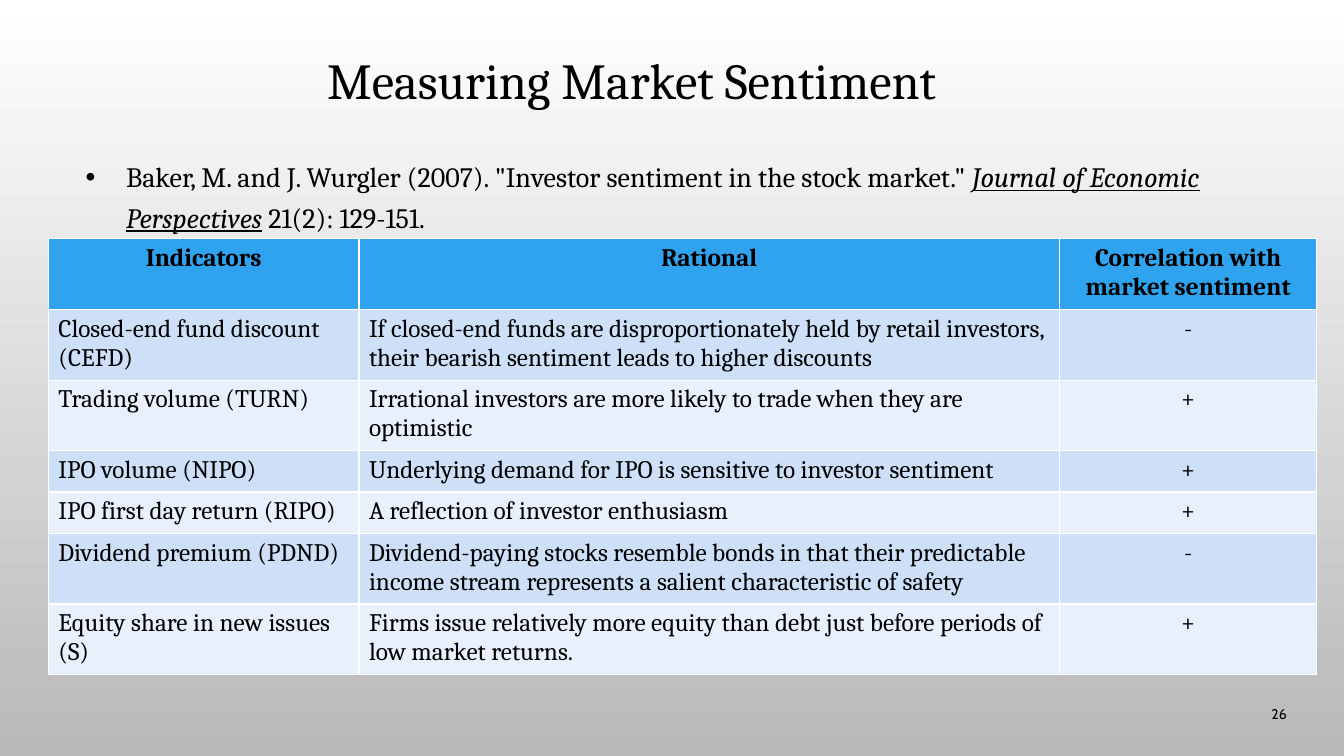
from lxml import etree
from pptx import Presentation
from pptx.dml.color import RGBColor
from pptx.enum.text import MSO_ANCHOR, MSO_AUTO_SIZE, PP_ALIGN
from pptx.oxml.ns import qn
from pptx.util import Inches, Pt

CENTER, LEFT, RIGHT = PP_ALIGN.CENTER, PP_ALIGN.LEFT, PP_ALIGN.RIGHT
MIDDLE = MSO_ANCHOR.MIDDLE

# Content
TITLE = "Measuring Market Sentiment"
CITATION = [
    ("Baker, M. and J. Wurgler (2007). \"Investor sentiment in the stock market.\" ", False),
    ("Journal of Economic Perspectives", True),
    (" 21(2): 129-151.", False),
]
PAGE_NUMBER = "26"
INDICATORS = [
    ("Indicators", "Rational", "Correlation with market sentiment"),
    ("Closed-end fund discount (CEFD)",
     "If closed-end funds are disproportionately held by retail investors, "
     "their bearish sentiment leads to higher discounts", "-"),
    ("Trading volume (TURN)",
     "Irrational investors are more likely to trade when they are optimistic", "+"),
    ("IPO volume (NIPO)",
     "Underlying demand for IPO is sensitive to investor sentiment", "+"),
    ("IPO first day return (RIPO)", "A reflection of investor enthusiasm", "+"),
    ("Dividend premium (PDND)",
     "Dividend-paying stocks resemble bonds in that their predictable "
     "income stream represents a salient characteristic of safety", "-"),
    ("Equity share in new issues (S)",
     "Firms issue relatively more equity than debt just before periods of "
     "low market returns.", "+"),
]
COLUMN_WIDTHS = (3.08, 6.95, 2.55)
ROW_HEIGHT = 0.41
HEADER_FILL = "2FA3EE"
BAND_FILLS = ("CDE0F8", "E8F0FC")
BLACK = "000000"


def color(value):
    return RGBColor.from_string(value)


def style(font, size, name="Cambria", bold=False):
    font.size, font.name, font.bold = Pt(size), name, bold
    font.color.rgb = color(BLACK)


def place(shape, left, top, width, height):
    shape.left, shape.top = Inches(left), Inches(top)
    shape.width, shape.height = Inches(width), Inches(height)


presentation = Presentation()
presentation.slide_width = Inches(13.33)
presentation.slide_height = Inches(7.5)
slide = presentation.slides.add_slide(presentation.slide_layouts[1])

# Background gradient, white at the top
background = slide.background.fill
background.gradient()
background.gradient_angle = 270
for stop, value in zip(background.gradient_stops, ("FFFFFF", "B9B9B9")):
    stop.color.rgb = color(value)

# Title
title = slide.shapes.title
place(title, 2.38, 0.36, 7.77, 0.94)
title.text_frame.text = TITLE
title.text_frame.auto_size = MSO_AUTO_SIZE.NONE
title.text_frame.vertical_anchor = MIDDLE
paragraph = title.text_frame.paragraphs[0]
paragraph.alignment, paragraph.line_spacing = CENTER, 0.9
style(paragraph.runs[0].font, 36)

# Citation bullet
body = slide.placeholders[1]
place(body, 0.75, 1.47, 12.1, 1.05)
body.text_frame.auto_size = MSO_AUTO_SIZE.NONE
paragraph = body.text_frame.paragraphs[0]
paragraph.line_spacing = 1.2
paragraph.space_before, paragraph.space_after = Pt(0), Pt(9.6)
properties = paragraph._p.get_or_add_pPr()
properties.set("marL", str(Inches(0.4)))
properties.set("indent", str(-Inches(0.4)))
bullet_color = etree.SubElement(properties, qn("a:buClr"))
etree.SubElement(bullet_color, qn("a:srgbClr"), val=BLACK)
etree.SubElement(properties, qn("a:buFont"), typeface="Arial")
etree.SubElement(properties, qn("a:buChar"), char="•")
for text, is_journal in CITATION:
    run = paragraph.add_run()
    run.text = text
    style(run.font, 20)
    run.font.italic = run.font.underline = is_journal

# Page number
number = slide.shapes.add_textbox(Inches(12.02), Inches(6.88), Inches(0.84), Inches(0.4))
number.text_frame.word_wrap = True
number.text_frame.vertical_anchor = MIDDLE
number.text_frame.text = PAGE_NUMBER
paragraph = number.text_frame.paragraphs[0]
paragraph.alignment = RIGHT
style(paragraph.runs[0].font, 10, "Cabin")

# Indicator table; the default table style supplies the white borders
table = slide.shapes.add_table(
    len(INDICATORS), len(COLUMN_WIDTHS), Inches(0.48), Inches(2.37),
    Inches(sum(COLUMN_WIDTHS)), Inches(ROW_HEIGHT * len(INDICATORS))).table
for column, width in zip(table.columns, COLUMN_WIDTHS):
    column.width = Inches(width)
for row_index, values in enumerate(INDICATORS):
    is_header = row_index == 0
    fill = HEADER_FILL if is_header else BAND_FILLS[(row_index - 1) % 2]
    for column_index, text in enumerate(values):
        cell = table.cell(row_index, column_index)
        cell.fill.solid()
        cell.fill.fore_color.rgb = color(fill)
        cell.text_frame.text = text
        paragraph = cell.text_frame.paragraphs[0]
        paragraph.alignment = CENTER if is_header or column_index == 2 else LEFT
        style(paragraph.runs[0].font, 18, bold=is_header)

presentation.save("out.pptx")
